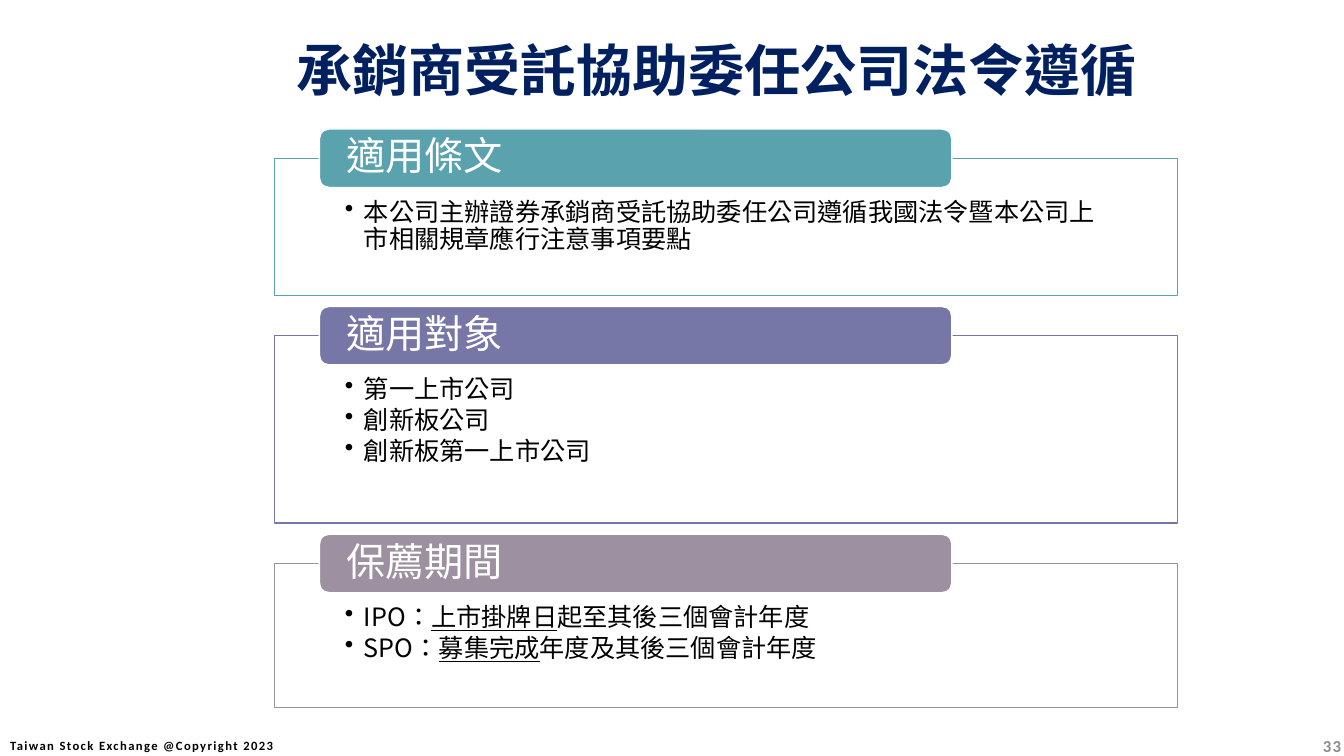
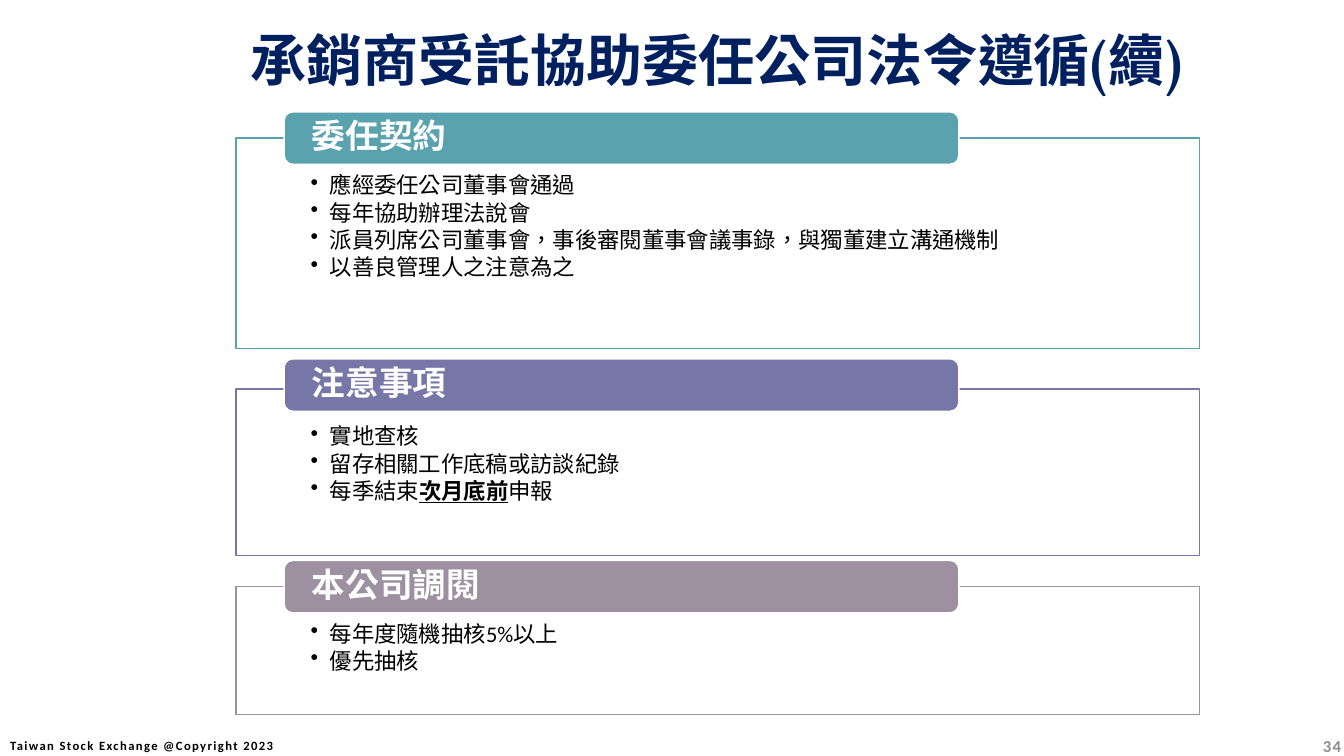
import pptx
import pptx.util
import pptx.dml.color
import pptx.enum.shapes
import pptx.enum.text
import pptx.oxml.ns
from lxml import etree

Inch = pptx.util.Inches
Shape = pptx.enum.shapes.MSO_SHAPE
Align = pptx.enum.text.PP_ALIGN
Anchor = pptx.enum.text.MSO_ANCHOR

WIDE, HIGH = 13.33, 7.5
FOOTER = "Taiwan Stock Exchange @Copyright 2023"

THEME = {
    "panels": ("5AA2AE", "7677A6", "9D90A0"),
    "white": "FFFFFF",
    "asian": "Noto Sans CJK SC",
    "title": {"name": "Vollkorn", "size": 40, "bold": True, "color": "002060"},
    "footer": {"name": "Calibri", "size": 9, "bold": True, "color": "000000"},
    "number": {"name": "Calibri", "size": 12, "bold": True, "color": "8C8C8C"},
}

# Text between underscores is marked; each panel: tab top, box top, box height, head, items
SLIDES = [
    {
        "title": "承銷商受託協助委任公司法令遵循", "number": "33", "top": 0.37,
        "left": 2.72, "width": 8.96, "tab": 0.58,
        "pad": (0.7, 0.41, 0.7, 0.14), "inset": 0.24,
        "head": {"name": "Noto Sans CJK SC", "size": 28, "bold": False, "color": "FFFFFF"},
        "body": {"name": "Noto Sans CJK SC", "size": 18, "color": "000000"},
        "mark": {"underline": True},
        "panels": [
            (1.28, 1.57, 1.36, "適用條文", [
                "本公司主辦證券承銷商受託協助委任公司遵循我國法令暨本公司上市相關規章應行注意事項要點"]),
            (3.04, 3.33, 1.86, "適用對象", [
                "第一上市公司", "創新板公司", "創新板第一上市公司"]),
            (5.3, 5.59, 1.43, "保薦期間", [
                "IPO：_上市掛牌日_起至其後三個會計年度",
                "SPO：_募集完成_年度及其後三個會計年度"]),
        ],
    },
    {
        "title": "承銷商受託協助委任公司法令遵循(續)", "number": "34", "top": 0.27,
        "left": 2.34, "width": 9.56, "tab": 0.52,
        "pad": (0.74, 0.36, 0.74, 0.12), "inset": 0.25,
        "head": {"name": "Calibri", "size": 24, "bold": True, "color": "FFFFFF"},
        "body": {"name": "Calibri", "size": 16, "color": "000000"},
        "mark": {"underline": True, "bold": True},
        "panels": [
            (1.11, 1.37, 2.09, "委任契約", [
                "應經委任公司董事會通過",
                "每年協助辦理法說會",
                "派員列席公司董事會，事後審閱董事會議事錄，與獨董建立溝通機制",
                "以善良管理人之注意為之"]),
            (3.56, 3.86, 1.65, "注意事項", [
                "實地查核", "留存相關工作底稿或訪談紀錄", "每季結束_次月底前_申報"]),
            (5.56, 5.82, 1.27, "本公司調閱", [
                "每年度隨機抽核5%以上", "優先抽核"]),
        ],
    },
]


def paint(color):
    return pptx.dml.color.RGBColor.from_string(color)


def add_run(para, text, style, track=None):
    run = para.add_run()
    run.text = text
    for key, value in style.items():
        if key == "color":
            run.font.color.rgb = paint(value)
        else:
            setattr(run.font, key, pptx.util.Pt(value) if key == "size" else value)
    props = run.font._element
    props.set("lang", "zh-TW")
    if track:
        props.set("spc", str(track))
    asian = etree.SubElement(props, pptx.oxml.ns.qn("a:ea"))
    asian.set("typeface", THEME["asian"])


def set_frame(frame, anchor, pad):
    frame.word_wrap = True
    frame.vertical_anchor = anchor
    for side, gap in zip(("left", "top", "right", "bottom"), pad):
        setattr(frame, "margin_" + side, Inch(gap))


def add_label(slide, area, text, style, align, track=None):
    box = slide.shapes.add_textbox(*map(Inch, area))
    set_frame(box.text_frame, Anchor.MIDDLE, (0.1, 0.05, 0.1, 0.05))
    para = box.text_frame.paragraphs[0]
    para.alignment = align
    add_run(para, text, style, track)


def add_block(slide, kind, area, fill, line):
    shape = slide.shapes.add_shape(kind, *map(Inch, area))
    shape.shadow.inherit = False
    shape.fill.solid()
    shape.fill.fore_color.rgb = paint(fill)
    shape.line.color.rgb = paint(line)
    shape.line.width = pptx.util.Pt(1)
    return shape.text_frame


def add_bullet(para):
    props = para._p.get_or_add_pPr()
    props.set("marL", str(Inch(0.19)))
    props.set("indent", str(-Inch(0.19)))
    etree.SubElement(props, pptx.oxml.ns.qn("a:buChar")).set("char", "•")


def fill_list(frame, items, style, mark):
    size = style["size"]
    for i, item in enumerate(items):
        para = frame.add_paragraph() if i else frame.paragraphs[0]
        add_bullet(para)
        para.alignment = Align.LEFT
        para.line_spacing = pptx.util.Pt(round(size * 1.07, 1))
        para.space_after = pptx.util.Pt(size * 0.15)
        for j, part in enumerate(item.split("_")):
            add_run(para, part, {**style, **mark} if j % 2 else style)


def add_panel(slide, data, panel, color):
    """Draw an outlined list with a coloured tab over its top edge."""
    tab_top, top, height, head, items = panel
    left, width = data["left"], data["width"]
    frame = add_block(slide, Shape.RECTANGLE, (left, top, width, height),
                      THEME["white"], color)
    set_frame(frame, Anchor.TOP, data["pad"])
    fill_list(frame, items, data["body"], data["mark"])

    area = (left + width * 0.05, tab_top, width * 0.7, data["tab"])
    frame = add_block(slide, Shape.ROUNDED_RECTANGLE, area, color, THEME["white"])
    set_frame(frame, Anchor.MIDDLE, (data["inset"], 0, data["inset"], 0))
    para = frame.paragraphs[0]
    para.alignment = Align.LEFT
    para.line_spacing = 0.9
    add_run(para, head, data["head"])


def add_slide(deck, data):
    slide = deck.slides.add_slide(deck.slide_layouts[6])
    add_label(slide, (-0.14, 7.2, 3.09, 0.4), FOOTER, THEME["footer"], Align.CENTER, 100)
    add_label(slide, (12.81, 7.2, 0.59, 0.4), data["number"], THEME["number"],
              Align.RIGHT, 100)
    add_label(slide, (2.03, data["top"], 10.15, 0.63), data["title"], THEME["title"],
              Align.CENTER)
    for panel, color in zip(data["panels"], THEME["panels"]):
        add_panel(slide, data, panel, color)


def main():
    deck = pptx.Presentation()
    deck.slide_width, deck.slide_height = Inch(WIDE), Inch(HIGH)
    for data in SLIDES:
        add_slide(deck, data)
    deck.save("out.pptx")


if __name__ == "__main__":
    main()
